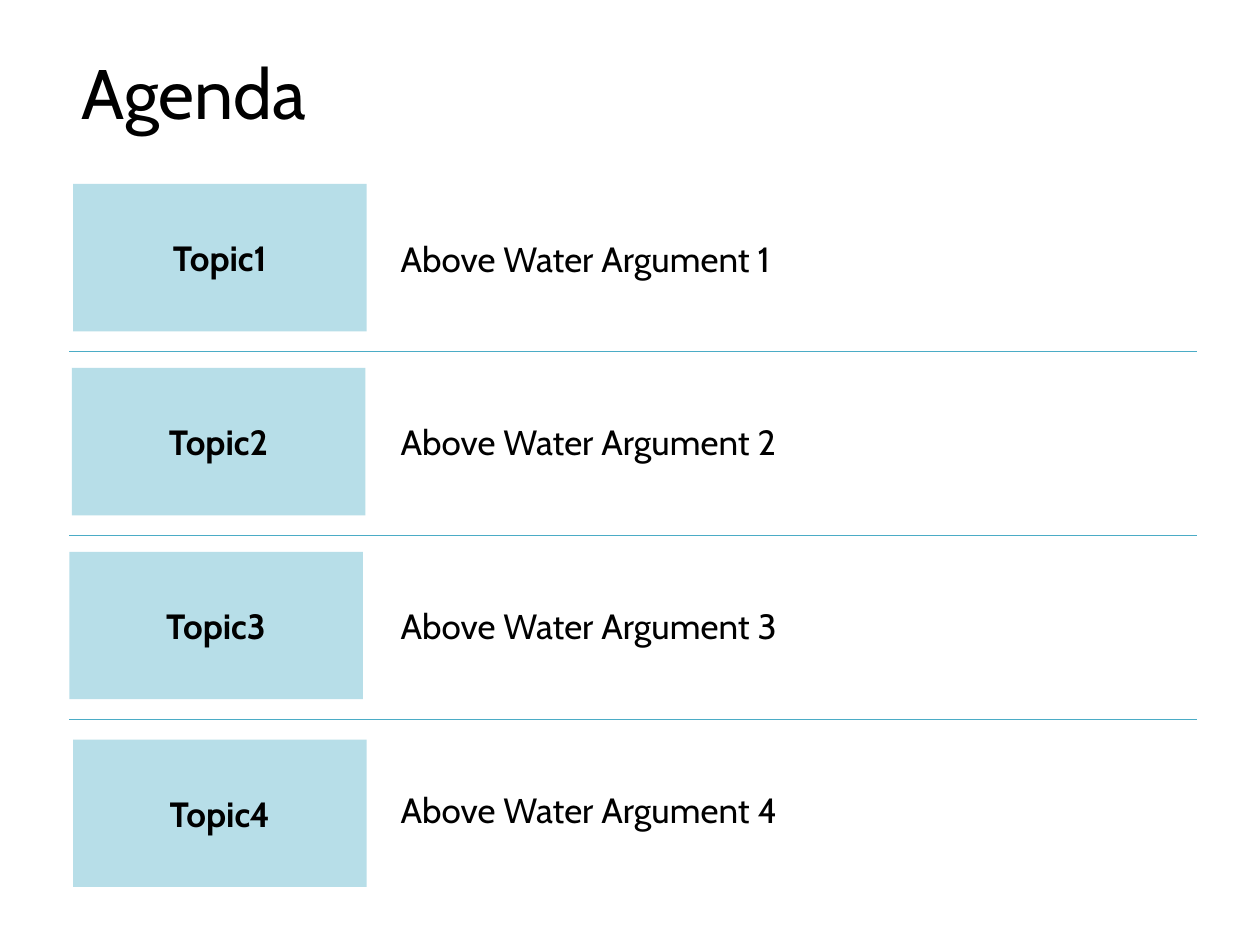
from lxml import etree
from pptx import Presentation
from pptx.dml.color import RGBColor
from pptx.enum import shapes, text
from pptx.oxml import ns
from pptx.util import Inches, Pt

BLACK = RGBColor(0x00, 0x00, 0x00)
PALE_BLUE = RGBColor(0xB7, 0xDE, 0xE8)
RULE_BLUE = RGBColor(0x4B, 0xAC, 0xC6)

TITLE_FONT = {"name": "Cabin", "size": Pt(40), "bold": False}
ARGUMENT_FONT = {"name": "Cabin", "size": Pt(20), "bold": False}
TOPIC_FONT = {"name": "Cabin", "size": Pt(20), "bold": True}


def write(frame, words, font_format):
    paragraph = frame.paragraphs[0]
    run = paragraph.add_run()
    run.text = words
    for key, value in font_format.items():
        setattr(run.font, key, value)
    run.font.color.rgb = BLACK
    return paragraph


def set_borders(cell, ruled_sides):
    properties = cell._tc.get_or_add_tcPr()
    for index, side in enumerate(("lnL", "lnR", "lnT", "lnB")):
        line = etree.Element(ns.qn("a:" + side), w=str(Pt(1)))
        if side in ruled_sides:
            fill = etree.SubElement(line, ns.qn("a:solidFill"))
            etree.SubElement(fill, ns.qn("a:srgbClr"), val=str(RULE_BLUE))
        else:
            etree.SubElement(line, ns.qn("a:noFill"))
        properties.insert(index, line)


deck = Presentation()
deck.slide_width, deck.slide_height = Inches(10), Inches(7.5)
slide = deck.slides.add_slide(deck.slide_layouts[6])

# Agenda table: arguments in the right column, rules between rows
topic_positions = [(0.58, 1.46), (0.57, 2.92), (0.55, 4.38), (0.58, 5.87)]
row_count = len(topic_positions)
agenda = slide.shapes.add_table(
    row_count, 2, Inches(0.55), Inches(1.33), Inches(8.95), Inches(5.84)
).table
agenda.first_row = agenda.horz_banding = False
agenda.columns[0].width = Inches(2.53)
agenda.columns[1].width = Inches(6.42)

for row in range(row_count):
    ruled_sides = []
    if row > 0:
        ruled_sides.append("lnT")
    if row < row_count - 1:
        ruled_sides.append("lnB")
    for column in range(2):
        cell = agenda.cell(row, column)
        cell.fill.background()
        cell.vertical_anchor = text.MSO_ANCHOR.MIDDLE
        set_borders(cell, ruled_sides)
    write(cell.text_frame, f"Above Water Argument {row + 1}", ARGUMENT_FONT)

# Topic blocks over the left column
for number, (left, top) in enumerate(topic_positions, 1):
    topic = slide.shapes.add_shape(
        shapes.MSO_SHAPE.RECTANGLE, Inches(left), Inches(top), Inches(2.33), Inches(1.17)
    )
    topic.shadow.inherit = False
    topic.fill.solid()
    topic.fill.fore_color.rgb = PALE_BLUE
    topic.line.fill.background()
    topic.text_frame.vertical_anchor = text.MSO_ANCHOR.MIDDLE
    label = write(topic.text_frame, f"Topic{number}", TOPIC_FONT)
    label.alignment = text.PP_ALIGN.CENTER

# Title
title = slide.shapes.add_textbox(Inches(0.55), Inches(0.34), Inches(9.24), Inches(0.77))
title.text_frame.word_wrap = True
title.text_frame.auto_size = text.MSO_AUTO_SIZE.SHAPE_TO_FIT_TEXT
write(title.text_frame, "Agenda", TITLE_FONT)

deck.save("out.pptx")
